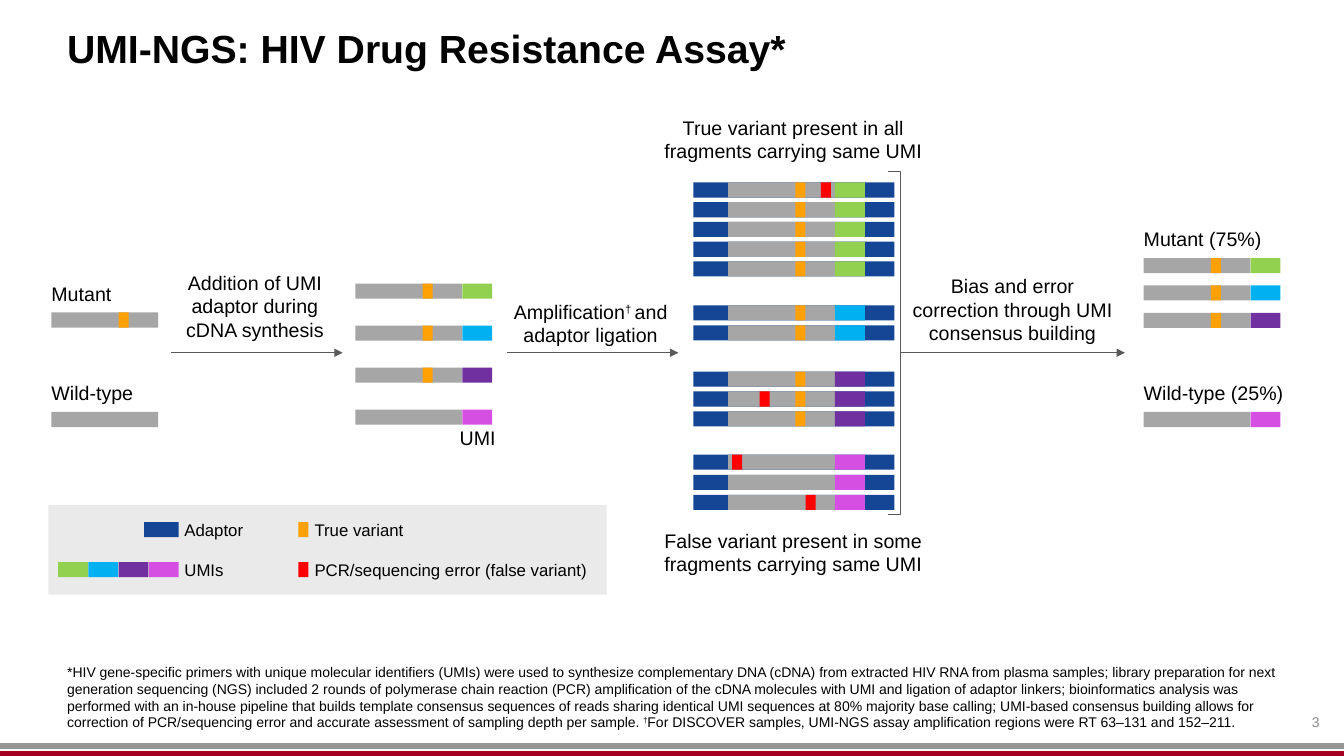
import pptx
import pptx.util
import pptx.dml.color
import pptx.enum.shapes
import pptx.enum.text
from lxml import etree

Pt = pptx.util.Pt
ALIGN = pptx.enum.text.PP_ALIGN
ANCHOR = pptx.enum.text.MSO_ANCHOR
rgb = pptx.dml.color.RGBColor.from_string

deck = pptx.Presentation()
deck.slide_width = pptx.util.Inches(13.3333)
deck.slide_height = pptx.util.Inches(7.5)
slide = deck.slides.add_slide(deck.slide_layouts[6])
shapes = slide.shapes

# Square grid: 400 columns by 225 rows
CELL = deck.slide_width / 400
BAR_H, BACKBONE_W, UMI_W, MARK_W = 4.5, 31.8, 8.9, 3
ADAPTOR_W, ADAPTED_W = 10.3, 59.8
VARIANT_AT = 20
GREY, NAVY, ORANGE, RED, LINE = "A6A6A6", "154695", "FFA004", "FF0000", "595959"
GREEN, BLUE, PURPLE, PINK = UMIS = "92D050", "00B0F0", "7030A0", "D54FE3"


def add_bar(left, top, width, fill, height=BAR_H):
    bar = shapes.add_shape(
        pptx.enum.shapes.MSO_SHAPE.RECTANGLE,
        *(round(v * CELL) for v in (left, top, width, height)))
    bar.shadow.inherit = False
    bar.fill.solid()
    bar.fill.fore_color.rgb = rgb(fill)
    bar.line.fill.background()


def add_text(box, runs, size=14, align=ALIGN.LEFT, anchor=ANCHOR.MIDDLE,
             wrap=True, bold=False, color="000000"):
    """Runs that begin with a dagger are raised."""
    frame = shapes.add_textbox(*(round(v * CELL) for v in box)).text_frame
    frame.margin_left = frame.margin_right = 0
    frame.margin_top = frame.margin_bottom = 0
    frame.word_wrap = wrap
    frame.vertical_anchor = anchor
    paragraph = frame.paragraphs[0]
    paragraph.alignment = align
    if bold:
        paragraph.line_spacing = 0.95
    for words in runs:
        run = paragraph.add_run()
        run.text = words
        run.font.name = "Arial"
        run.font.size = Pt(size)
        run.font.bold = bold
        run.font.color.rgb = rgb(color)
        if words.startswith("†"):
            run.font._element.set("baseline", "30000")


# Footer bands and step arrows: left, right, row, colour, weight, arrowhead
for left, right, row, color, weight, arrow in [
    (0, 400, 222, "969696", 4.25, False),
    (0, 400, 224.4, "A50021", 4.25, False),
    (51, 102, 105, LINE, 0.75, True),
    (150.9, 201.9, 105, LINE, 0.75, True),
    (268, 334.8, 105, LINE, 0.75, True),
]:
    rule = shapes.add_connector(
        pptx.enum.shapes.MSO_CONNECTOR.STRAIGHT,
        *(round(v * CELL) for v in (left, row, right, row)))
    rule.line.color.rgb = rgb(color)
    rule.line.width = Pt(weight)
    if arrow:
        etree.SubElement(rule.line._get_or_add_ln(),
                         pptx.oxml.ns.qn("a:tailEnd"), type="triangle")
    etree.SubElement(rule._element.spPr, pptx.oxml.ns.qn("a:effectLst"))

add_text((20, 0, 360, 30), ["UMI-NGS: HIV Drug Resistance Assay*"], 28, bold=True)

# Fragments: backbone left, top, UMI, has true variant, error offset, has adaptors
fragments = [
    (15.3, 93, None, True, None, False),
    (15.3, 122.6, None, False, None, False),
    (340.4, 122.6, PINK, False, None, False),
]
for i, umi in enumerate(UMIS):
    fragments.append((105.8, 84.4 + 12.5 * i, umi, umi != PINK, None, False))
for i, umi in enumerate(UMIS[:3]):
    fragments.append((340.4, 76.8 + 8.15 * i, umi, True, None, False))
for first, last, umi, errors in [
    (54.3, 77.8, GREEN, [27.6, None, None, None, None]),
    (90.9, 96.8, BLUE, [None, None]),
    (110.6, 122.4, PURPLE, [None, 9.4, None]),
    (135.3, 147.3, PINK, [1.2, None, 23.1]),
]:
    pitch = (last - first) / (len(errors) - 1)
    for i, error in enumerate(errors):
        fragments.append((216.7, first + pitch * i, umi, umi != PINK, error, True))

for left, top, umi, variant, error, adapted in fragments:
    if adapted:
        add_bar(left - ADAPTOR_W, top, ADAPTED_W, NAVY)
    add_bar(left, top, BACKBONE_W, GREY)
    if variant:
        add_bar(left + VARIANT_AT, top, MARK_W, ORANGE)
    if umi:
        add_bar(left + BACKBONE_W, top, UMI_W, umi)
    if error is not None:
        add_bar(left + error, top, MARK_W, RED)

# Bracket around the amplified fragments
outline = shapes.build_freeform(round(264.4 * CELL), round(51 * CELL))
outline.add_line_segments(
    [(round(x * CELL), round(y * CELL)) for x, y in [(268, 51), (268, 153), (264.4, 153)]],
    close=False)
bracket = outline.convert_to_shape()
bracket.shadow.inherit = False
bracket.fill.background()
bracket.line.color.rgb = rgb(LINE)
bracket.line.width = Pt(0.75)

for left, top, width, label in [
    (15.3, 82.5, 19.5, "Mutant"),
    (15.3, 112, 26.4, "Wild-type"),
    (136.8, 125.4, 11.7, "UMI"),
    (340.4, 66, 38.1, "Mutant (75%)"),
    (340.4, 112, 45, "Wild-type (25%)"),
]:
    add_text((left, top, width, 9.9), [label], wrap=False)

for box, runs in [
    ((51, 76.2, 49.8, 29.7), ["Addition of UMI adaptor during cDNA synthesis"]),
    ((150.9, 89.1, 49.8, 14.1), ["Amplification", "† ", "and adaptor ligation"]),
    ((271.2, 78.3, 60.3, 27.6),
     ["Bias and error correction through UMI consensus building"]),
    ((190.2, 31.5, 91.8, 19.8),
     ["True variant present in all fragments carrying same UMI"]),
    ((190.2, 154.5, 91.8, 19.8),
     ["False variant present in some fragments carrying same UMI"]),
]:
    add_text(box, runs, align=ALIGN.CENTER)

# Legend
KEY_ROWS = 155.4, 167.3
add_bar(14.4, 150.3, 166.2, "EAEAEA", height=26.7)
add_bar(42.9, KEY_ROWS[0], ADAPTOR_W, NAVY)
for i, umi in enumerate(UMIS):
    add_bar(17.3 + 9 * i, KEY_ROWS[1], UMI_W, umi)
for row, mark, key, meaning in zip(
        KEY_ROWS, (ORANGE, RED), ("Adaptor", "UMIs"),
        ("True variant", "PCR/sequencing error (false variant)")):
    add_bar(88.8, row, MARK_W, mark)
    add_text((54.9, row - 2.1, 20.1, 9), [key], 12, wrap=False)
    add_text((93.6, row - 2.1, 92.4, 9), [meaning], 12, wrap=False)

add_text((20, 197.4, 360, 20.1), [
    "*HIV gene-specific primers with unique molecular identifiers (UMIs) were used to "
    "synthesize complementary DNA (cDNA) from extracted HIV RNA from plasma samples; "
    "library preparation for next generation sequencing (NGS) included 2 rounds of "
    "polymerase chain reaction (PCR) amplification of the cDNA molecules with UMI and "
    "ligation of adaptor linkers; bioinformatics analysis was performed with an in-house "
    "pipeline that builds template consensus sequences of reads sharing identical UMI "
    "sequences at 80% majority base calling; UMI-based consensus building allows for "
    "correction of PCR/sequencing error and accurate assessment of sampling depth per "
    "sample. ",
    "†",
    "For DISCOVER samples, UMI-NGS assay amplification regions were RT 63–131 and 152–211.",
], 10, anchor=ANCHOR.BOTTOM)
add_text((380.1, 205.5, 12.6, 12), ["3"], 10, ALIGN.RIGHT, ANCHOR.BOTTOM, color="8C8C8C")

deck.save("out.pptx")
